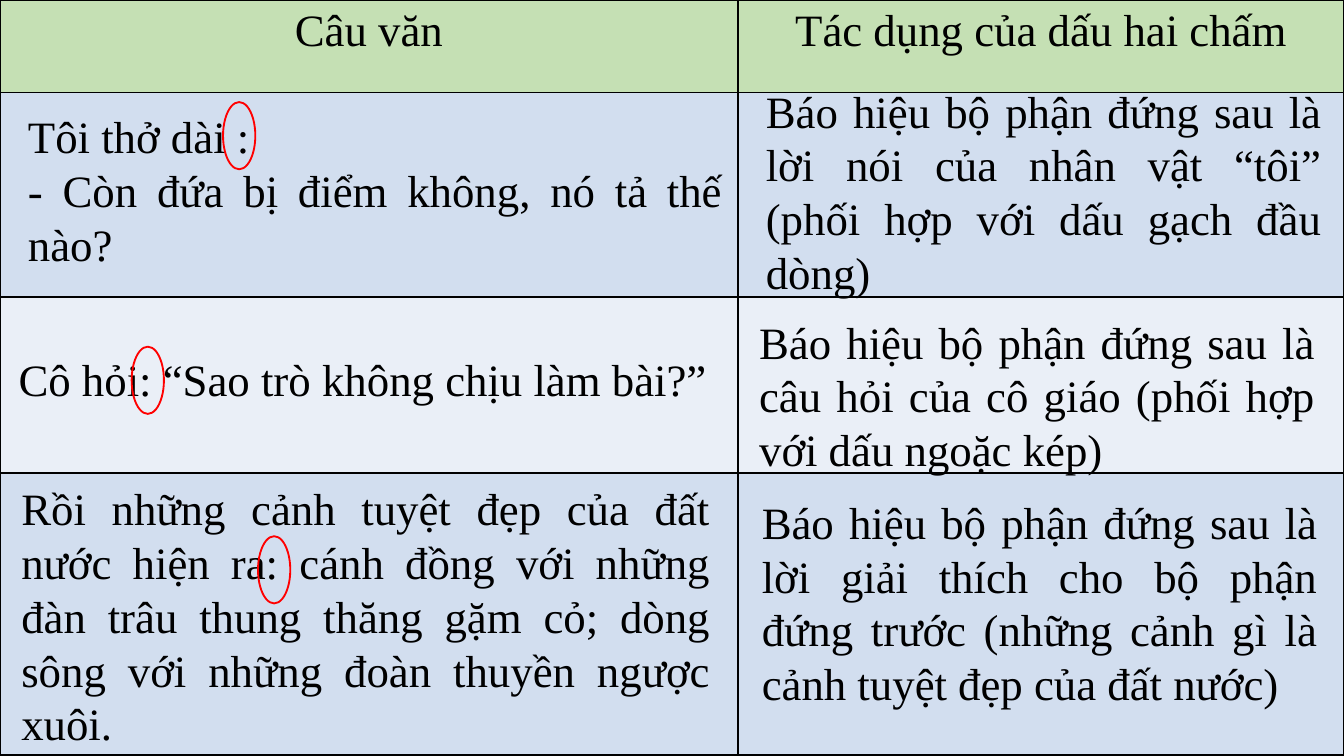
from dataclasses import dataclass

import pptx
import pptx.dml.color
import pptx.enum.shapes
import pptx.enum.text
import pptx.oxml
import pptx.oxml.ns
import pptx.util
from pptx.dml.color import RGBColor
from pptx.util import Inches

BLACK = RGBColor(0x00, 0x00, 0x00)
RED = RGBColor(0xFF, 0x00, 0x00)
GREEN = RGBColor(0xC5, 0xE0, 0xB4)
BLUE = RGBColor(0xD2, 0xDE, 0xEF)
PALE_BLUE = RGBColor(0xEA, 0xEF, 0xF7)

FONT = {"name": "Times New Roman", "size": pptx.util.Pt(24), "bold": False}
ALIGN = pptx.enum.text.PP_ALIGN
AUTO_SIZE = pptx.enum.text.MSO_AUTO_SIZE

COLUMNS = (5.49, 4.51)
ROWS = (0.69, 1.52, 1.31, 2.1)
ROW_FILLS = (GREEN, BLUE, PALE_BLUE, BLUE)
HEADERS = ("Câu văn", "Tác dụng của dấu hai chấm")


@dataclass
class Note:
    left: float
    top: float
    width: float
    height: float
    lines: tuple[str, ...]
    wrap: bool = True


@dataclass
class Ring:
    left: float
    top: float


EFFECTS = (
    Note(5.6, 0.57, 4.33, 1.72, (
        "Báo hiệu bộ phận đứng sau là lời nói của nhân vật “tôi” "
        "(phối hợp với dấu gạch đầu dòng)",)),
    Note(5.55, 2.29, 4.33, 1.31, (
        "Báo hiệu bộ phận đứng sau là câu hỏi của cô giáo "
        "(phối hợp với dấu ngoặc kép)",)),
    Note(5.57, 3.63, 4.33, 1.72, (
        "Báo hiệu bộ phận đứng sau là lời giải thích cho bộ phận đứng trước "
        "(những cảnh gì là cảnh tuyệt đẹp của đất nước)",)),
)
SENTENCES = (
    Note(0.11, 0.76, 5.36, 1.31, (
        "Tôi thở dài :", "- Còn đứa bị điểm không, nó tả thế nào?")),
    Note(0.04, 2.57, 5.36, 0.5, (
        "Cô hỏi: “Sao trò không chịu làm bài?”",), wrap=False),
    Note(0.06, 3.53, 5.32, 2.12, (
        "Rồi những cảnh tuyệt đẹp của đất nước hiện ra: cánh đồng với những "
        "đàn trâu thung thăng gặm cỏ; dòng sông với những đoàn thuyền ngược "
        "xuôi.",)),
)
COLON_RINGS = (Ring(1.66, 0.76), Ring(0.98, 2.58), Ring(1.92, 3.99))


def write(p, text: str, align) -> None:
    p.alignment = align
    r = p.add_run()
    r.text = text
    for key, value in FONT.items():
        setattr(r.font, key, value)
    r.font.color.rgb = BLACK


def add_borders(cell) -> None:
    """Put a 1 pt black line on all four sides of the cell."""
    tcPr = cell._tc.get_or_add_tcPr()
    for i, side in enumerate(("lnL", "lnR", "lnT", "lnB")):
        tcPr.insert(i, pptx.oxml.parse_xml(
            f'<a:{side} {pptx.oxml.ns.nsdecls("a")} w="12700"><a:solidFill>'
            f'<a:srgbClr val="{BLACK}"/></a:solidFill></a:{side}>'))


def draw_table(s) -> None:
    table = s.shapes.add_table(
        len(ROWS), len(COLUMNS), 0, 0,
        Inches(sum(COLUMNS)), Inches(sum(ROWS))).table
    for column, width in zip(table.columns, COLUMNS):
        column.width = Inches(width)
    for row, height, color in zip(table.rows, ROWS, ROW_FILLS):
        row.height = Inches(height)
        for cell in row.cells:
            cell.fill.solid()
            cell.fill.fore_color.rgb = color
            add_borders(cell)
    for i, header in enumerate(HEADERS):
        write(table.cell(0, i).text_frame.paragraphs[0], header, ALIGN.CENTER)


def draw_note(s, note: Note) -> None:
    sp = s.shapes.add_textbox(Inches(note.left), Inches(note.top),
                              Inches(note.width), Inches(note.height))
    tf = sp.text_frame
    tf.word_wrap = note.wrap
    tf.auto_size = AUTO_SIZE.SHAPE_TO_FIT_TEXT
    for i, line in enumerate(note.lines):
        p = tf.add_paragraph() if i else tf.paragraphs[0]
        write(p, line, ALIGN.JUSTIFY)


def draw_ring(s, ring: Ring) -> None:
    sp = s.shapes.add_shape(
        pptx.enum.shapes.MSO_SHAPE.OVAL, Inches(ring.left), Inches(ring.top),
        Inches(0.24), Inches(0.5))
    sp.shadow.inherit = False
    sp.fill.background()
    sp.line.color.rgb = RED
    sp.line.width = pptx.util.Pt(1)


def main() -> None:
    prs = pptx.Presentation()
    prs.slide_width = Inches(10)
    prs.slide_height = prs.slide_width * 9 // 16
    s = prs.slides.add_slide(prs.slide_layouts[6])
    draw_table(s)
    for note in EFFECTS + SENTENCES:
        draw_note(s, note)
    for ring in COLON_RINGS:
        draw_ring(s, ring)
    prs.save("out.pptx")


if __name__ == "__main__":
    main()
